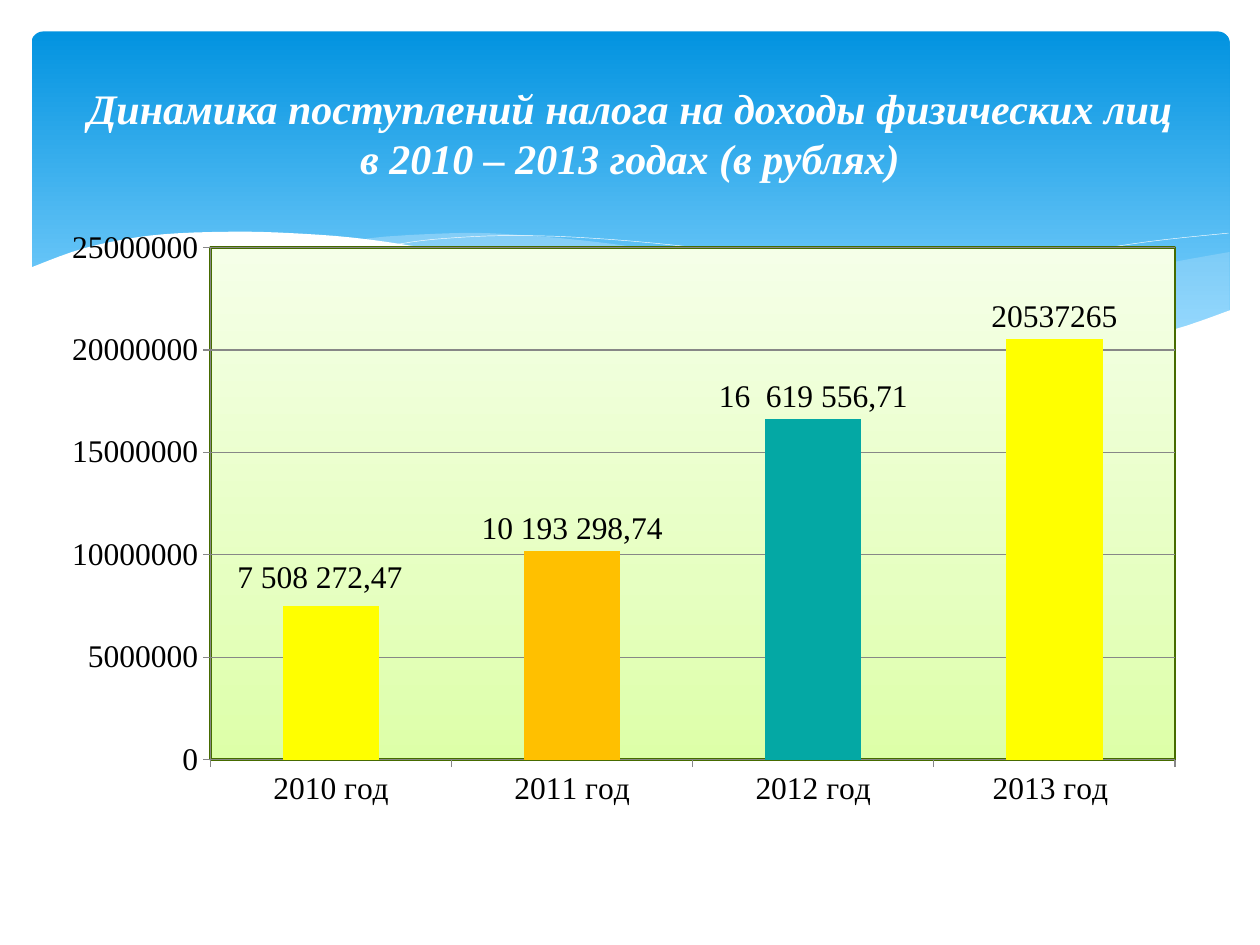
from lxml import etree
from pptx import Presentation
from pptx.chart import data as chart_data
from pptx.dml.color import RGBColor
from pptx.enum import chart as charts, shapes, text
from pptx.oxml import parse_xml
from pptx.oxml.ns import nsdecls, qn
from pptx.util import Inches, Pt

COLORS = {
    "white": "FFFFFF", "black": "000000", "sky_top": "0293E0", "sky_low": "83D3FE",
    "wave": "C6E7FC", "yellow": "FFFF00", "orange": "FFC000", "teal": "04A8A4",
    "grid": "878787", "plot_edge": "466B00",
    "lime": "DDFFA8", "lime_mid": "E6FFC1", "lime_pale": "F5FFE8",
}
SERIF = "Times New Roman"

# Key points of the wave curves, in inches
WAVE_RIGHT = [(9.76, 2), (9.21, 2.1), (8.61, 2.23), (7.79, 2.42), (7.06, 2.57), (6.61, 2.65),
              (7.05, 2.71), (7.57, 2.76), (8.14, 2.78), (8.72, 2.74), (9.21, 2.65), (9.76, 2.47)]
WAVE_MIDDLE = [(8.93, 2.73), (8.07, 2.6), (7.06, 2.4), (6.29, 2.22), (5.55, 2.05), (4.89, 1.94),
               (4.2, 1.87), (3.61, 1.85), (2.86, 1.91), (3.62, 2.03), (4.49, 2.22), (5.3, 2.4),
               (6.18, 2.58), (6.95, 2.7), (7.61, 2.77), (8.28, 2.78), (8.93, 2.73)]
LINE_LEFT = [(3.09, 1.95), (3.44, 1.9), (4.01, 1.87), (4.69, 1.89), (5.56, 1.97),
             (6.65, 2.13), (7.6, 2.33), (8.31, 2.51), (9.07, 2.72)]
LINE_RIGHT = [(6.13, 2.57), (6.72, 2.41), (7.48, 2.23), (8.36, 2.04), (9.1, 1.92), (9.75, 1.85)]
WAVE_FRONT = [(9.77, 2.46), (9.3, 2.62), (8.75, 2.73), (8.09, 2.77), (7.26, 2.72), (6.48, 2.62),
              (5.55, 2.45), (4.47, 2.2), (3.65, 2.02), (2.92, 1.9), (2.3, 1.85), (1.77, 1.84),
              (1.19, 1.87), (0.67, 1.97), (0.23, 2.13)]


def rgb(name):
    return RGBColor.from_string(COLORS[name])


def apply(target, values):
    for name, value in values.items():
        setattr(target, name, value)


def smooth(points, steps=5):
    """Catmull-Rom curve through the key points."""
    padded = [points[0], *points, points[-1]]
    curve = [points[0]]
    for a, b, c, d in zip(padded, padded[1:], padded[2:], padded[3:]):
        for t in (step / steps for step in range(1, steps + 1)):
            curve.append(tuple(
                0.5 * (2 * q + (r - p) * t + (2 * p - 5 * q + 4 * r - s) * t ** 2
                       + (3 * q - p - 3 * r + s) * t ** 3)
                for p, q, r, s in zip(a, b, c, d)))
    return curve


def gradient_xml(stops, angle):
    """Gradient fill; the angle runs clockwise from the left."""
    marks = "".join(f'<a:gs pos="{pos * 1000}"><a:srgbClr val="{COLORS[name]}"/></a:gs>'
                    for pos, name in stops)
    return (f'<a:gradFill {nsdecls("a")}><a:gsLst>{marks}</a:gsLst>'
            f'<a:lin ang="{angle * 60000}" scaled="0"/></a:gradFill>')


def layout_xml(**values):
    parts = "".join(f'<c:{name} val="{value}"/>' for name, value in values.items())
    return parse_xml(f'<c:layout {nsdecls("c")}><c:manualLayout>{parts}</c:manualLayout></c:layout>')


def set_layout(parent, index, layout):
    for old in parent.findall(qn("c:layout")):
        parent.remove(old)
    parent.insert(index, layout)


class SlideBuilder:
    def __init__(self, slide):
        self.slide = slide
        self.font = {"name": SERIF, "size": Pt(18), "color": "black"}

    def format_font(self, font, **changes):
        values = {**self.font, **changes}
        font.color.rgb = rgb(values.pop("color"))
        apply(font, values)

    def card(self, left, top, width, height, stops):
        shape = self.slide.shapes.add_shape(
            shapes.MSO_SHAPE.ROUNDED_RECTANGLE, *map(Inches, (left, top, width, height)))
        shape.adjustments[0] = 0.034
        shape.shadow.inherit = False
        shape.line.fill.background()
        properties = shape._element.spPr
        properties.insert(2, parse_xml(gradient_xml(stops, 90)))

    def curve(self, points, fill=None, opacity=100, corners=()):
        outline = [(Inches(x), Inches(y)) for x, y in [*smooth(points), *corners]]
        builder = self.slide.shapes.build_freeform(*outline[0], scale=1.0)
        builder.add_line_segments(outline[1:], close=fill is not None)
        shape = builder.convert_to_shape()
        shape.shadow.inherit = False
        if fill is None:
            shape.fill.background()
            shape.line.color.rgb = rgb("white")
            shape.line.width = Pt(0.25)
            return
        shape.line.fill.background()
        shape.fill.solid()
        shape.fill.fore_color.rgb = rgb(fill)
        if opacity < 100:
            color = shape._element.spPr.find(".//" + qn("a:srgbClr"))
            etree.SubElement(color, qn("a:alpha")).set("val", str(opacity * 1000))

    def column_chart(self, box, categories, values, fills, labels):
        content = chart_data.CategoryChartData()
        content.categories = categories
        content.add_series("Series 1", values)
        chart = self.slide.shapes.add_chart(
            charts.XL_CHART_TYPE.COLUMN_CLUSTERED, *map(Inches, box), content).chart
        apply(chart, {"has_legend": False, "has_title": False})
        self.format_font(chart.font, name="Calibri")

        # Axes
        for axis in (chart.category_axis, chart.value_axis):
            self.format_font(axis.tick_labels.font)
            axis.major_tick_mark = charts.XL_TICK_MARK.OUTSIDE
            axis.format.line.color.rgb = rgb("grid")
        apply(chart.value_axis, {"minimum_scale": 0, "maximum_scale": 25000000,
                                 "major_unit": 5000000, "has_major_gridlines": True})
        chart.value_axis.major_gridlines.format.line.color.rgb = rgb("grid")

        # Columns and their labels
        plot = chart.plots[0]
        apply(plot, {"gap_width": 150, "vary_by_categories": False})
        series = plot.series[0]
        series.format.fill.solid()
        series.format.fill.fore_color.rgb = rgb("yellow")
        for index, name in fills.items():
            fill = series.points[index].format.fill
            fill.solid()
            fill.fore_color.rgb = rgb(name)
        outside = charts.XL_LABEL_POSITION.OUTSIDE_END
        apply(series.data_labels, {"show_value": True, "position": outside})
        self.format_font(series.data_labels.font)
        for index, wording in enumerate(labels):
            label = series.points[index].data_label
            run = label.text_frame.paragraphs[0].add_run()
            run.text = wording
            self.format_font(run.font)
            label.position = outside
        first_label = series._element.find(".//" + qn("c:dLbl"))
        set_layout(first_label, 1, layout_xml(x=-0.01, y=-0.01))

        # Plot area
        area = chart._chartSpace.find(".//" + qn("c:plotArea"))
        set_layout(area, 0, layout_xml(layoutTarget="inner", xMode="edge", yMode="edge",
                                       x=0.125, y=0.032, w=0.861, h=0.84))
        fill = gradient_xml([(0, "lime"), (35, "lime_mid"), (100, "lime_pale")], 270)
        area.append(parse_xml(
            f'<c:spPr {nsdecls("c", "a")}>{fill}<a:ln w="19050"><a:solidFill>'
            f'<a:srgbClr val="{COLORS["plot_edge"]}"/></a:solidFill></a:ln></c:spPr>'))

    def title(self, box, wording):
        shape = self.slide.shapes.title
        apply(shape, dict(zip(("left", "top", "width", "height"), map(Inches, box))))
        frame = shape.text_frame
        apply(frame, {"word_wrap": True, "vertical_anchor": text.MSO_ANCHOR.MIDDLE})
        paragraph = frame.paragraphs[0]
        paragraph.alignment = text.PP_ALIGN.CENTER
        run = paragraph.add_run()
        run.text = wording
        self.format_font(run.font, size=Pt(24), color="white", bold=True, italic=True)
        self.slide.shapes._spTree.append(shape._element)  # in front of the card


def main():
    presentation = Presentation()
    apply(presentation, {"slide_width": Inches(10), "slide_height": Inches(7.5)})
    builder = SlideBuilder(presentation.slides.add_slide(presentation.slide_layouts[5]))

    # Blue card with waves
    builder.card(0.25, 0.25, 9.51, 2.7, [(0, "sky_top"), (90, "sky_low")])
    builder.curve(WAVE_RIGHT, "wave", 29)
    builder.curve(WAVE_MIDDLE, "wave", 40)
    builder.curve(LINE_LEFT)
    builder.curve(LINE_RIGHT)
    builder.curve(WAVE_FRONT, "white", corners=[(0.23, 3.29), (9.77, 3.29)])

    # Tax receipts by year
    builder.column_chart(
        (0.56, 1.81, 8.89, 4.84),
        ["2010 год", "2011 год", "2012 год", "2013 год "],
        [7508272.47, 10193298.74, 16619556.71, 20537265],
        {1: "orange", 2: "teal"},
        ["7 508 272,47", "10 193 298,74", "16  619 556,71"])

    builder.title((0.5, 0.37, 9, 1.37),
                  "Динамика поступлений налога на доходы физических лиц в 2010 – 2013 годах (в рублях)")
    presentation.save("out.pptx")


if __name__ == "__main__":
    main()
